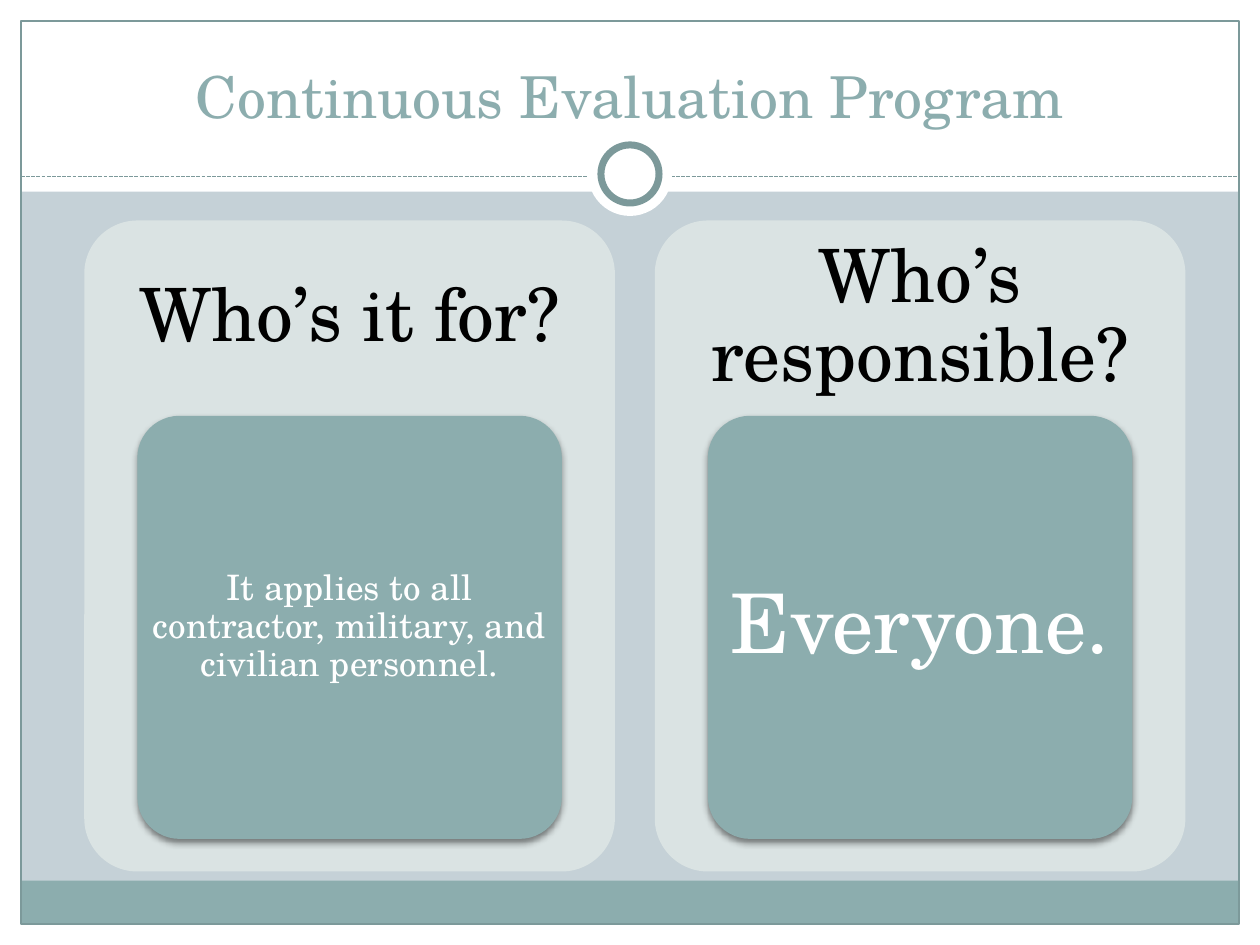
from dataclasses import dataclass

import pptx
import pptx.dml.color
import pptx.enum.dml
import pptx.enum.shapes
import pptx.enum.text
import pptx.oxml
import pptx.oxml.ns
import pptx.util

Pt = pptx.util.Pt
Shape = pptx.enum.shapes.MSO_SHAPE
Anchor = pptx.enum.text.MSO_ANCHOR
DRAWING = pptx.oxml.ns.nsdecls("a")


@dataclass(frozen=True)
class Theme:
    font: str = "TeX Gyre Schola"
    background: str = "C5D1D7"
    white: str = "FFFFFF"
    black: str = "000000"
    accent: str = "8CADAE"
    outline: str = "7C999A"
    panel: str = "DAE3E3"
    title_size: float = 33
    heading_size: float = 42
    body_size: float = 20
    emphasis_size: float = 47


def rgb(value):
    return pptx.dml.color.RGBColor.from_string(value)


class SlideBuilder:
    """Holds the theme and the current slide; lengths are in points."""

    def __init__(self, slide, theme):
        self.slide = slide
        self.theme = theme
        fill = slide.background.fill
        fill.solid()
        fill.fore_color.rgb = rgb(theme.background)

    def shape(self, kind, left, top, width, height, fill=None, line=None, weight=0.75):
        shape = self.slide.shapes.add_shape(kind, Pt(left), Pt(top), Pt(width), Pt(height))
        shape.shadow.inherit = False
        if fill:
            shape.fill.solid()
            shape.fill.fore_color.rgb = rgb(fill)
        else:
            shape.fill.background()
        if line:
            shape.line.color.rgb = rgb(line)
            shape.line.width = Pt(weight)
        else:
            shape.line.fill.background()
        return shape

    def rounded(self, left, top, width, height, fill):
        shape = self.shape(Shape.ROUNDED_RECTANGLE, left, top, width, height, fill)
        shape.adjustments[0] = 0.1
        return shape

    def dashed_line(self, left, right, y):
        line = self.slide.shapes.add_connector(
            pptx.enum.shapes.MSO_CONNECTOR.STRAIGHT, Pt(left), Pt(y), Pt(right), Pt(y))
        line.line.color.rgb = rgb(self.theme.outline)
        line.line.width = Pt(0.75)
        line.line.dash_style = pptx.enum.dml.MSO_LINE.SQUARE_DOT
        properties = line._element.spPr
        properties.append(pptx.oxml.parse_xml(f"<a:effectLst {DRAWING}/>"))

    def drop_shadow(self, shape):
        properties = shape._element.spPr
        effects = properties.find(pptx.oxml.ns.qn("a:effectLst"))
        effects.append(pptx.oxml.parse_xml(
            f'<a:outerShdw {DRAWING} blurRad="{Pt(4)}" dist="{Pt(2)}" dir="5400000" '
            f'rotWithShape="0"><a:srgbClr val="{self.theme.black}">'
            '<a:alpha val="45000"/></a:srgbClr></a:outerShdw>'))

    def set_text(self, shape, text, size, color, anchor=Anchor.MIDDLE, margin=0, spacing=0.9):
        frame = shape.text_frame
        frame.word_wrap = True
        frame.auto_size = pptx.enum.text.MSO_AUTO_SIZE.NONE
        frame.vertical_anchor = anchor
        frame.margin_left = frame.margin_right = Pt(margin)
        frame.margin_top = frame.margin_bottom = Pt(margin)
        frame.text = text
        para = frame.paragraphs[0]
        para.alignment = pptx.enum.text.PP_ALIGN.CENTER
        para.line_spacing = spacing
        para.font.name = self.theme.font
        para.font.size = Pt(size)
        para.font.color.rgb = rgb(color)

    def title(self, text, left, top, width, height):
        title = self.slide.shapes.title
        title.left, title.top = Pt(left), Pt(top)
        title.width, title.height = Pt(width), Pt(height)
        self.set_text(title, text, self.theme.title_size, self.theme.accent,
                      Anchor.BOTTOM, margin=3.6, spacing=1)
        # The title must lie in front of the white header band.
        title._element.getparent().append(title._element)

    def panel(self, left, heading, text, text_size):
        """Draw a tall panel with a heading above a shadowed card."""
        theme = self.theme
        top, width, card_width = 126, 303.2, 242.6
        self.rounded(left, top, width, 372, theme.panel)
        box = self.slide.shapes.add_textbox(Pt(left), Pt(top), Pt(width), Pt(111.6))
        self.set_text(box, heading, theme.heading_size, theme.black, margin=12)
        card = self.rounded(left + (width - card_width) / 2, 237.6, card_width, 241.8,
                            theme.accent)
        self.drop_shadow(card)
        self.set_text(card, text, text_size, theme.white)


def draw_frame(builder):
    theme = builder.theme
    edge, width, height = 12, 720, 540
    for band in (
        (0, height - edge, width, edge),
        (0, 0, width, 109.5),
        (0, 0, edge, height),
        (width - edge, 0, edge, height),
    ):
        builder.shape(Shape.RECTANGLE, *band, fill=theme.white)
    inner_width = width - 2 * edge
    builder.shape(Shape.RECTANGLE, edge, 503.3, inner_width, 24.5, fill=theme.accent)
    builder.shape(Shape.RECTANGLE, edge, edge, inner_width, height - 2 * edge,
                  line=theme.outline)
    builder.dashed_line(edge, width - edge, 100.8)
    center_x, center_y = width / 2, 99.4
    for diameter, outline in ((48, None), (33.2, theme.outline)):
        builder.shape(Shape.OVAL, center_x - diameter / 2, center_y - diameter / 2,
                      diameter, diameter, theme.white, outline, weight=4)


def main():
    deck = pptx.Presentation()
    deck.slide_width, deck.slide_height = Pt(720), Pt(540)
    theme = Theme()
    builder = SlideBuilder(deck.slides.add_slide(deck.slide_layouts[5]), theme)
    draw_frame(builder)
    builder.title("Continuous Evaluation Program", 24, 18, 672, 60)
    panels = (
        ("Who’s it for?", "It applies to all contractor, military, and civilian personnel.",
         theme.body_size),
        ("Who’s responsible?", "Everyone.", theme.emphasis_size),
    )
    for index, content in enumerate(panels):
        builder.panel(48.2 + index * 326, *content)
    deck.save("out.pptx")


if __name__ == "__main__":
    main()
